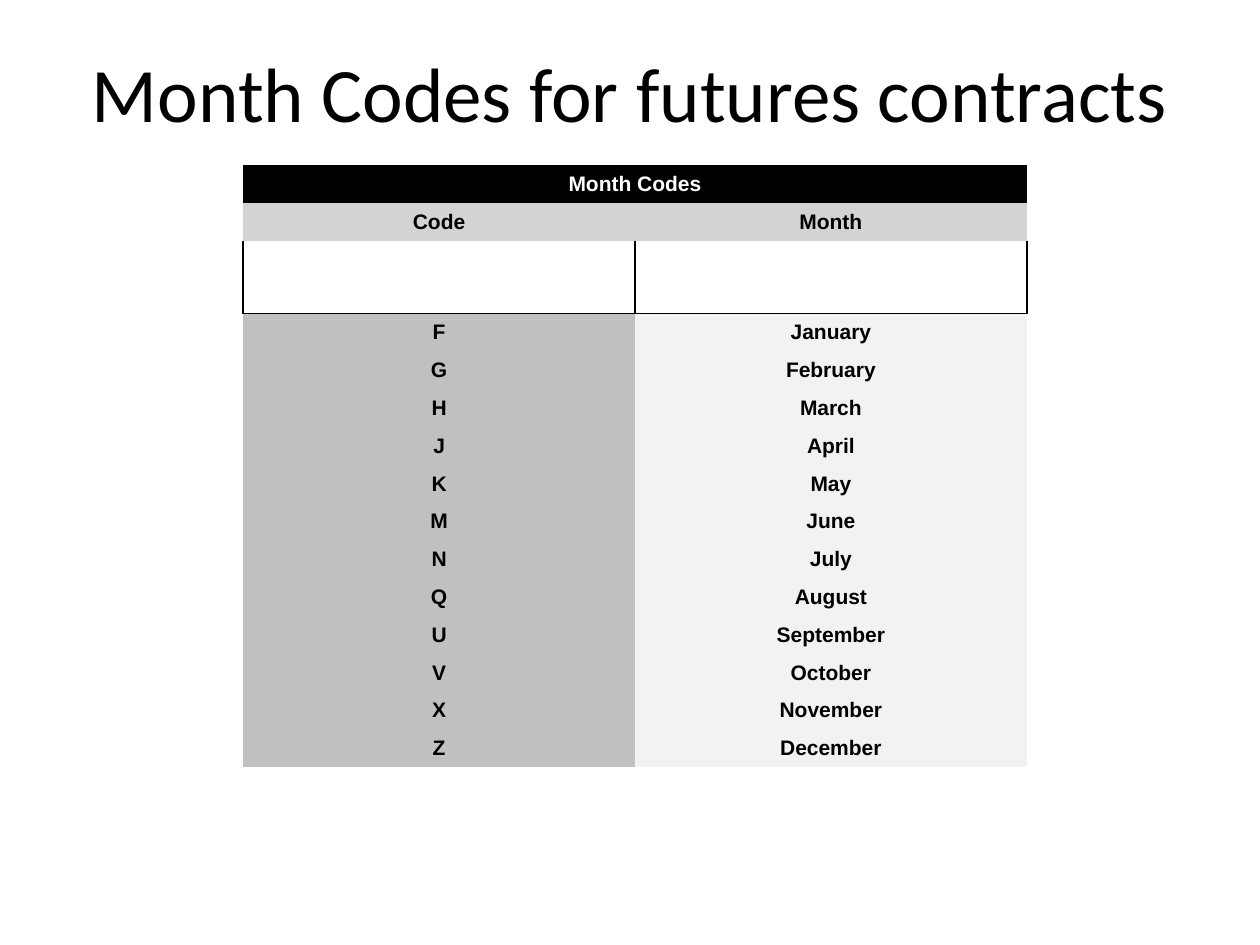
from lxml import etree
from pptx import Presentation
from pptx.dml.color import RGBColor
from pptx.enum.text import MSO_ANCHOR, PP_ALIGN
from pptx.oxml.ns import qn
from pptx.util import Inches, Pt

CENTER = PP_ALIGN.CENTER
MIDDLE = MSO_ANCHOR.MIDDLE
TITLE_ONLY_LAYOUT = 5
NO_STYLE_NO_GRID = "{2D5ABB26-0587-4C30-8999-92F81FD0307C}"

CODES = "FGHJKMNQUVXZ"
MONTHS = ["January", "February", "March", "April", "May", "June", "July",
          "August", "September", "October", "November", "December"]
ROW_HEIGHT = Inches(0.3)
BLANK_ROW_HEIGHT = Inches(0.58)
BLANK_ROW = 2


def color(hex_string):
    return RGBColor.from_string(hex_string)


def format_text(text_frame, font_name, size, hex_color, bold):
    paragraph = text_frame.paragraphs[0]
    paragraph.alignment = CENTER
    for run in paragraph.runs:
        run.font.name = font_name
        run.font.size = Pt(size)
        run.font.bold = bold
        run.font.color.rgb = color(hex_color)


def fill_cell(cell, text, fill, text_color="000000"):
    cell.text_frame.text = text
    format_text(cell.text_frame, "Arial", 12, text_color, True)
    cell.vertical_anchor = MIDDLE
    cell.margin_left = cell.margin_right = Inches(0.05)
    cell.margin_top = cell.margin_bottom = Inches(0.05)
    cell.fill.solid()
    cell.fill.fore_color.rgb = color(fill)


def outline_cell(cell, hex_color):
    """Draw the left, right and bottom borders of an unfilled cell."""
    properties = cell._tc.get_or_add_tcPr()
    for side in ("a:lnL", "a:lnR", "a:lnB"):
        line = etree.SubElement(properties, qn(side), w=str(Pt(1)))
        solid_fill = etree.SubElement(line, qn("a:solidFill"))
        etree.SubElement(solid_fill, qn("a:srgbClr"), val=hex_color)
    cell.fill.background()


def add_title(slide, left, top, width, height):
    title = slide.shapes.title
    title.left, title.top, title.width, title.height = left, top, width, height
    title.text_frame.text = "Month Codes for futures contracts"
    title.text_frame.vertical_anchor = MIDDLE
    format_text(title.text_frame, "Calibri", 44, "000000", False)


def add_month_table(slide, left, top, width):
    first_month_row = BLANK_ROW + 1
    row_count = first_month_row + len(MONTHS)
    height = ROW_HEIGHT * (row_count - 1) + BLANK_ROW_HEIGHT
    frame = slide.shapes.add_table(row_count, 2, left, top, width, height)
    table = frame.table
    table.first_row = table.horz_banding = False
    next(frame.element.iter(qn("a:tableStyleId"))).text = NO_STYLE_NO_GRID
    for row in table.rows:
        row.height = ROW_HEIGHT
    table.rows[BLANK_ROW].height = BLANK_ROW_HEIGHT

    table.cell(0, 0).merge(table.cell(0, 1))
    fill_cell(table.cell(0, 0), "Month Codes", "000000", "FFFFFF")
    for column, heading in enumerate(("Code", "Month")):
        fill_cell(table.cell(1, column), heading, "D3D3D3")
        outline_cell(table.cell(BLANK_ROW, column), "000000")
    for row, (code, month) in enumerate(zip(CODES, MONTHS), first_month_row):
        fill_cell(table.cell(row, 0), code, "C0C0C0")
        fill_cell(table.cell(row, 1), month, "F2F2F2")


def main():
    presentation = Presentation()
    presentation.slide_width = Inches(10)
    presentation.slide_height = Inches(7.5)
    slide = presentation.slides.add_slide(
        presentation.slide_layouts[TITLE_ONLY_LAYOUT])
    add_title(slide, Inches(0.5), Inches(0.3), Inches(9), Inches(0.85))
    add_month_table(slide, Inches(1.93), Inches(1.31), Inches(6.22))
    presentation.save("out.pptx")


if __name__ == "__main__":
    main()
